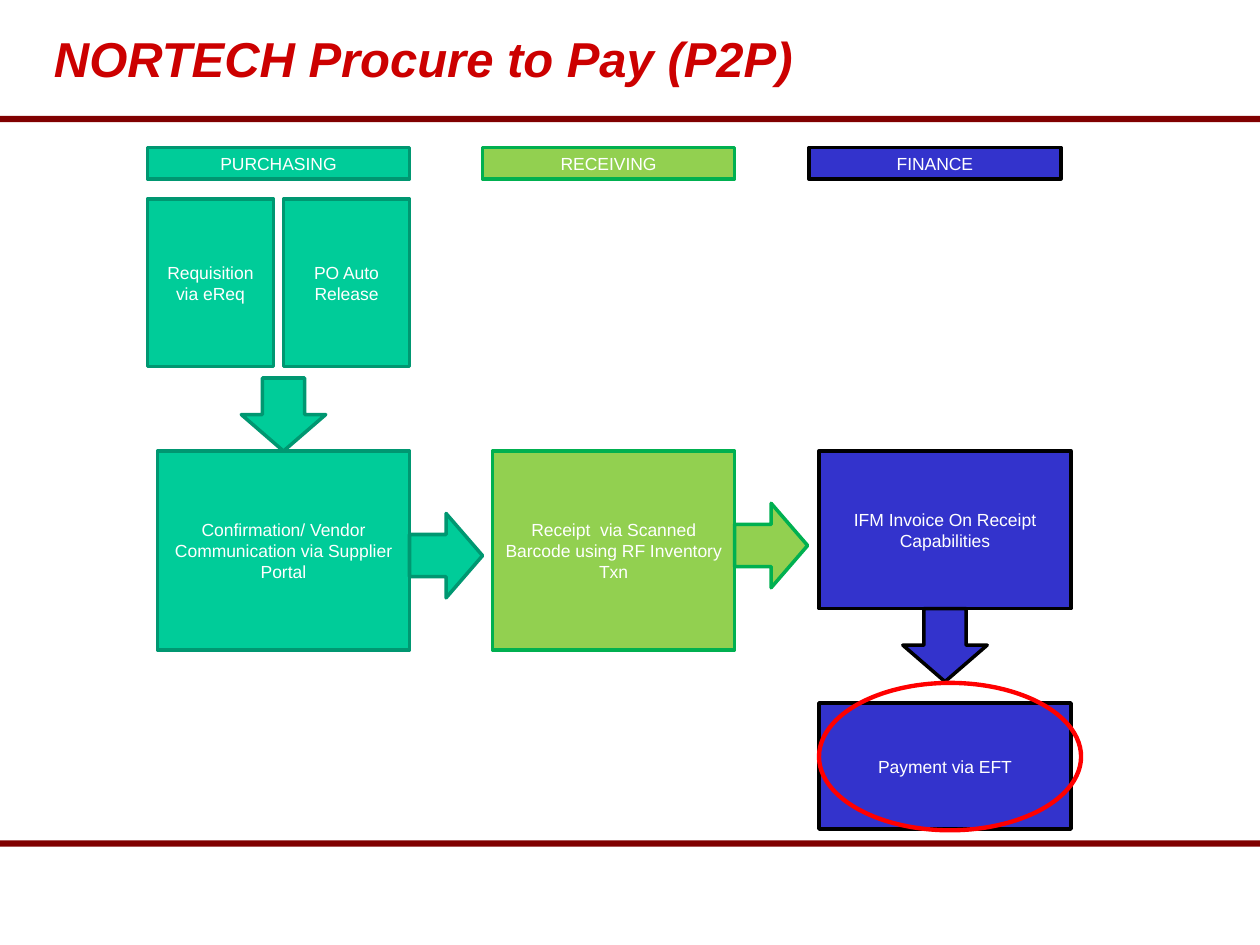
from pptx import Presentation
from pptx.dml.color import RGBColor
from pptx.enum.shapes import MSO_SHAPE
from pptx.enum.text import MSO_ANCHOR, PP_ALIGN
from pptx.util import Inches, Pt

PROCESS = MSO_SHAPE.FLOWCHART_PROCESS
ARROW = MSO_SHAPE.UP_ARROW
OVAL = MSO_SHAPE.OVAL
RECTANGLE = MSO_SHAPE.RECTANGLE
MIDDLE = MSO_ANCHOR.MIDDLE
CENTER = PP_ALIGN.CENTER

FONT = "Arial"
COLORS = {
    "title": "CC0000",
    "rule": "800000",
    "text": "FFFFFF",
    "highlight": "FF0000",
    "purchasing": "00CC99",
    "purchasing_edge": "009771",
    "receiving": "92D050",
    "receiving_edge": "00B050",
    "finance": "3333CC",
    "finance_edge": "000000",
}
DOWN, RIGHT = 180, 90
ARROW_WIDTH, ARROW_LENGTH = 0.67, 0.58
LABEL_HEIGHT = 0.25


def color(name):
    return RGBColor.from_string(COLORS[name])


def add_outline(slide, kind, box, fill=None, edge=None, weight=2):
    shape = slide.shapes.add_shape(kind, *map(Inches, box))
    shape.shadow.inherit = False
    if fill:
        shape.fill.solid()
        shape.fill.fore_color.rgb = color(fill)
    else:
        shape.fill.background()
    if edge:
        shape.line.color.rgb = color(edge)
        shape.line.width = Pt(weight)
    else:
        shape.line.fill.background()
    return shape


def add_words(shape, words, size, ink, heading=False):
    frame = shape.text_frame
    frame.word_wrap = True
    frame.vertical_anchor = MIDDLE
    paragraph = frame.paragraphs[0]
    if not heading:
        paragraph.alignment = CENTER
    run = paragraph.add_run()
    run.text = words
    run.font.name = FONT
    run.font.size = Pt(size)
    run.font.bold = run.font.italic = heading
    run.font.color.rgb = color(ink)


def add_step(slide, stage, box, words):
    step = add_outline(slide, PROCESS, box, stage, f"{stage}_edge")
    add_words(step, words, 10, "text")


def add_flow(slide, stage, center_x, center_y, direction):
    box = (center_x - ARROW_WIDTH / 2, center_y - ARROW_LENGTH / 2,
           ARROW_WIDTH, ARROW_LENGTH)
    flow = add_outline(slide, ARROW, box, stage, f"{stage}_edge")
    flow.rotation = direction


def add_frame(slide, box):
    left, top, width, height = box
    for offset in (0.92, 6.67):
        add_outline(slide, RECTANGLE, (left, top + offset, width, 0.05), "rule")
    title = slide.shapes.add_textbox(
        Inches(left + 0.33), Inches(top), Inches(width - 1), Inches(0.92))
    add_words(title, "NORTECH Procure to Pay (P2P)", 28, "title", heading=True)


def add_purchasing(slide, box):
    left, top, width, height = box
    stage = "purchasing"
    add_step(slide, stage, (left, top, width, LABEL_HEIGHT), "PURCHASING")
    sources = ("Requisition via eReq", "PO Auto Release")
    for index, words in enumerate(sources):
        source_box = (left + index * (width - 1), top + 0.41, 1, 1.33)
        add_step(slide, stage, source_box, words)
    add_flow(slide, stage, left + 1.08, top + 2.12, DOWN)
    add_step(slide, stage, (left + 0.08, top + 2.41, width - 0.08, height - 2.41),
             "Confirmation/ Vendor Communication via Supplier Portal")
    add_flow(slide, stage, left + width + ARROW_LENGTH / 2, top + 3.24, RIGHT)


def add_receiving(slide, box):
    left, top, width, height = box
    stage = "receiving"
    add_step(slide, stage, (left, top, width, LABEL_HEIGHT), "RECEIVING")
    add_step(slide, stage, (left + 0.08, top + 2.41, width - 0.08, height - 2.41),
             "Receipt  via Scanned Barcode using RF Inventory Txn")
    add_flow(slide, stage, left + width + ARROW_LENGTH / 2, top + 3.16, RIGHT)


def add_finance(slide, box):
    left, top, width, height = box
    stage = "finance"
    step_left = left + 0.08
    add_step(slide, stage, (left, top, width, LABEL_HEIGHT), "FINANCE")
    add_step(slide, stage, (step_left, top + 2.41, width, 1.25),
             "IFM Invoice On Receipt Capabilities")
    add_step(slide, stage, (step_left, top + height - 1, width, 1),
             "Payment via EFT")
    add_flow(slide, stage, step_left + width / 2, top + 3.95, DOWN)
    add_outline(slide, OVAL,
                (step_left, top + height - 1.16, width + 0.08, 1.17),
                edge="highlight", weight=2.5)


def main():
    deck = Presentation()
    deck.slide_width, deck.slide_height = Inches(10), Inches(7.5)
    slide = deck.slides.add_slide(deck.slide_layouts[6])
    add_frame(slide, (0, 0, 10, 7.5))
    add_purchasing(slide, (1.17, 1.17, 2.08, 3.99))
    add_receiving(slide, (3.83, 1.17, 2, 3.99))
    add_finance(slide, (6.42, 1.17, 2, 5.41))
    deck.save("out.pptx")


if __name__ == "__main__":
    main()
